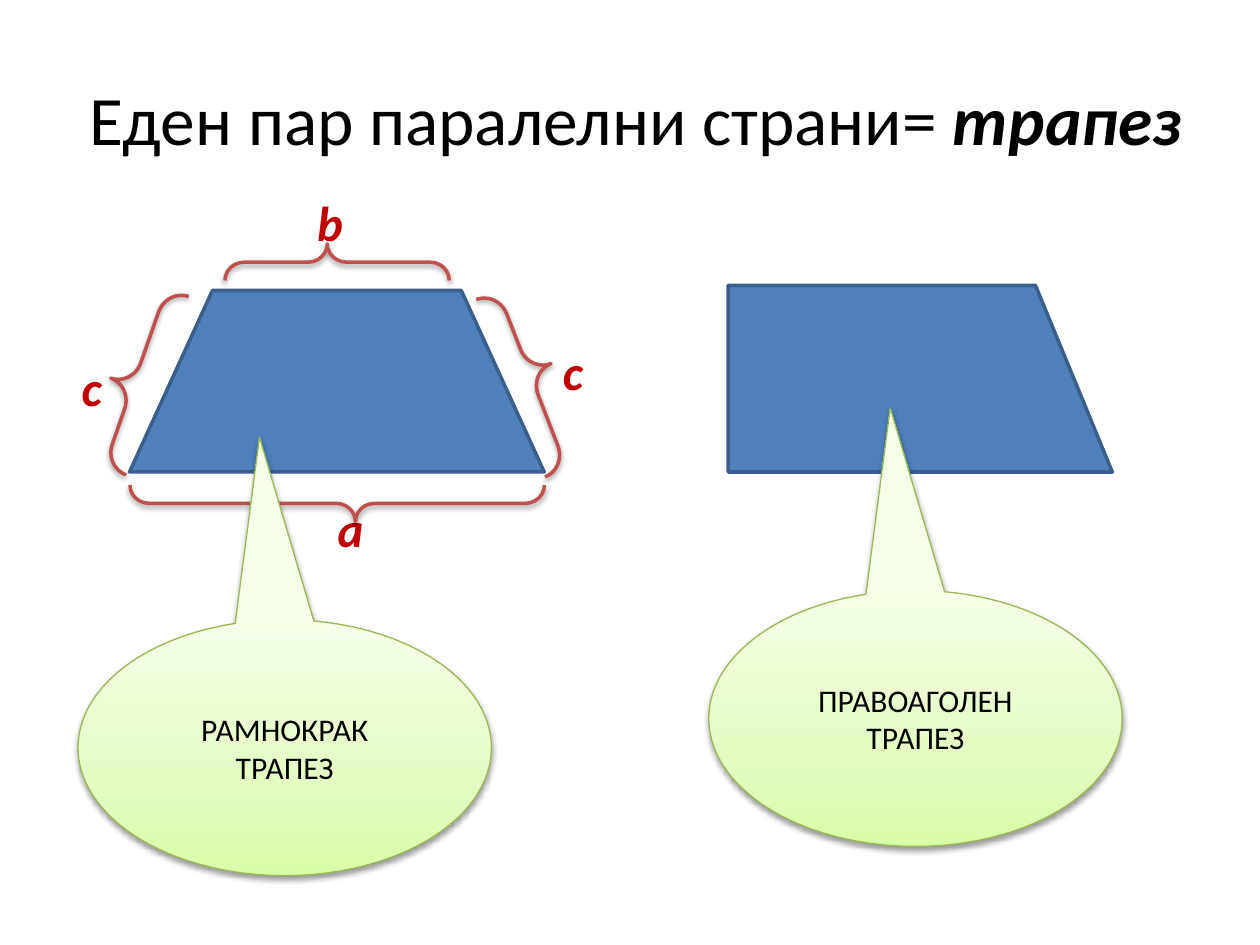
import pptx
import pptx.util
import pptx.dml.color
import pptx.enum.shapes
import pptx.enum.text
import pptx.oxml

Pt = pptx.util.Pt
KIND = pptx.enum.shapes.MSO_SHAPE
ALIGN = pptx.enum.text.PP_ALIGN
ANCHOR = pptx.enum.text.MSO_ANCHOR
FIT = pptx.enum.text.MSO_AUTO_SIZE
NS = 'xmlns:a="http://schemas.openxmlformats.org/drawingml/2006/main"'
STOPS = [(0, "DAFDA7"), (35, "E4FCC2"), (100, "F5FFE7")]


def color(code):
    return pptx.dml.color.RGBColor.from_string(code)


def style(run, size, code="000000", bold=False):
    font = run.font
    font.name, font.size = "Calibri", Pt(size)
    font.color.rgb = color(code)
    font.bold = font.italic = bold


def shape(slide, kind, box, line, width, turn=0, adjust=()):
    part = slide.shapes.add_shape(kind, *map(Pt, box))
    part.rotation = turn
    part.shadow.inherit = False
    part.line.color.rgb = color(line)
    part.line.width = Pt(width)
    for i, value in enumerate(adjust):
        part.adjustments[i] = value
    return part


def shade(part):
    # Soft shadow straight below the shape
    props = part._element.spPr
    props.remove(props.find(pptx.oxml.ns.qn("a:effectLst")))
    props.append(pptx.oxml.parse_xml(
        f'<a:effectLst {NS}><a:outerShdw blurRad="{Pt(3.1)}" '
        f'dist="{Pt(1.6)}" dir="5400000" rotWithShape="0">'
        '<a:srgbClr val="000000"><a:alpha val="38000"/></a:srgbClr>'
        '</a:outerShdw></a:effectLst>'))


def solid(slide, kind, box, turn):
    part = shape(slide, kind, box, "3A5F8C", 2, turn)
    part.fill.solid()
    part.fill.fore_color.rgb = color("4F81BD")


def brace(slide, box, turn):
    part = shape(slide, KIND.RIGHT_BRACE, box, "C0504D", 2, turn,
                 (0.527, 0.456))
    part.fill.background()
    shade(part)


def label(slide, text, box):
    part = slide.shapes.add_textbox(*map(Pt, box))
    frame = part.text_frame
    frame.word_wrap = False
    frame.auto_size = FIT.SHAPE_TO_FIT_TEXT
    frame.text = text
    style(frame.paragraphs[0].runs[0], 28, "C00000", True)


def title(slide):
    part = slide.shapes.add_textbox(Pt(39.6), Pt(22.5), Pt(648), Pt(90))
    frame = part.text_frame
    frame.word_wrap = True
    frame.vertical_anchor = ANCHOR.MIDDLE
    para = frame.paragraphs[0]
    para.alignment = ALIGN.CENTER
    for text, bold in [("Еден пар паралелни страни=", False),
                       (" трапез", True)]:
        run = para.add_run()
        run.text = text
        style(run, 39.6, bold=bold)


def callout(slide, text, left, top):
    part = shape(slide, KIND.OVAL_CALLOUT, (left, top, 236.2, 146.2),
                 "98B955", 0.75, adjust=(-0.061, -1.213))
    # Three-stop gradient, from the bottom up
    part.fill.gradient()
    part.fill.gradient_angle = 90
    grad = part._element.spPr.find(pptx.oxml.ns.qn("a:gradFill"))
    stops = "".join(f'<a:gs pos="{pos * 1000}"><a:srgbClr val="{code}"/></a:gs>'
                    for pos, code in STOPS)
    grad.replace(grad.find(pptx.oxml.ns.qn("a:gsLst")),
                 pptx.oxml.parse_xml(f'<a:gsLst {NS}>{stops}</a:gsLst>'))
    shade(part)
    frame = part.text_frame
    frame.word_wrap = True
    frame.vertical_anchor = ANCHOR.MIDDLE
    frame.text = text
    para = frame.paragraphs[0]
    para.alignment = ALIGN.CENTER
    style(para.runs[0], 18)


def main():
    deck = pptx.Presentation()
    deck.slide_width, deck.slide_height = Pt(720), Pt(540)
    slide = deck.slides.add_slide(deck.slide_layouts[6])
    title(slide)

    # Isosceles trapezium with its sides marked
    label(slide, "а", (185.8, 281.5, 29.5, 41))
    label(slide, "b", (174.2, 106.6, 26, 28))
    solid(slide, KIND.FLOWCHART_MANUAL_OPERATION, (74, 166, 237, 103.7), 180)
    for box, turn in [((182.2, 169.2, 20.9, 236.9), 90),
                      ((182.2, 85.7, 20.9, 128.2), 270),
                      ((64.1, 162, 26.6, 108), 199.3),
                      ((290.9, 162.7, 26.6, 108.7), 338.8)]:
        brace(slide, box, turn)
    for left, top in [(314.6, 191.5), (39.6, 200.9)]:
        label(slide, "c", (left, top, 23, 28))
    callout(slide, "РАМНОКРАК ТРАПЕЗ", 44.6, 354.2)

    # Right trapezium
    solid(slide, KIND.FLOWCHART_MANUAL_INPUT, (472.5, 106.6, 106.6, 219.6), 90)
    callout(slide, "ПРАВОАГОЛЕН ТРАПЕЗ", 405, 337.5)
    deck.save("out.pptx")


main()
